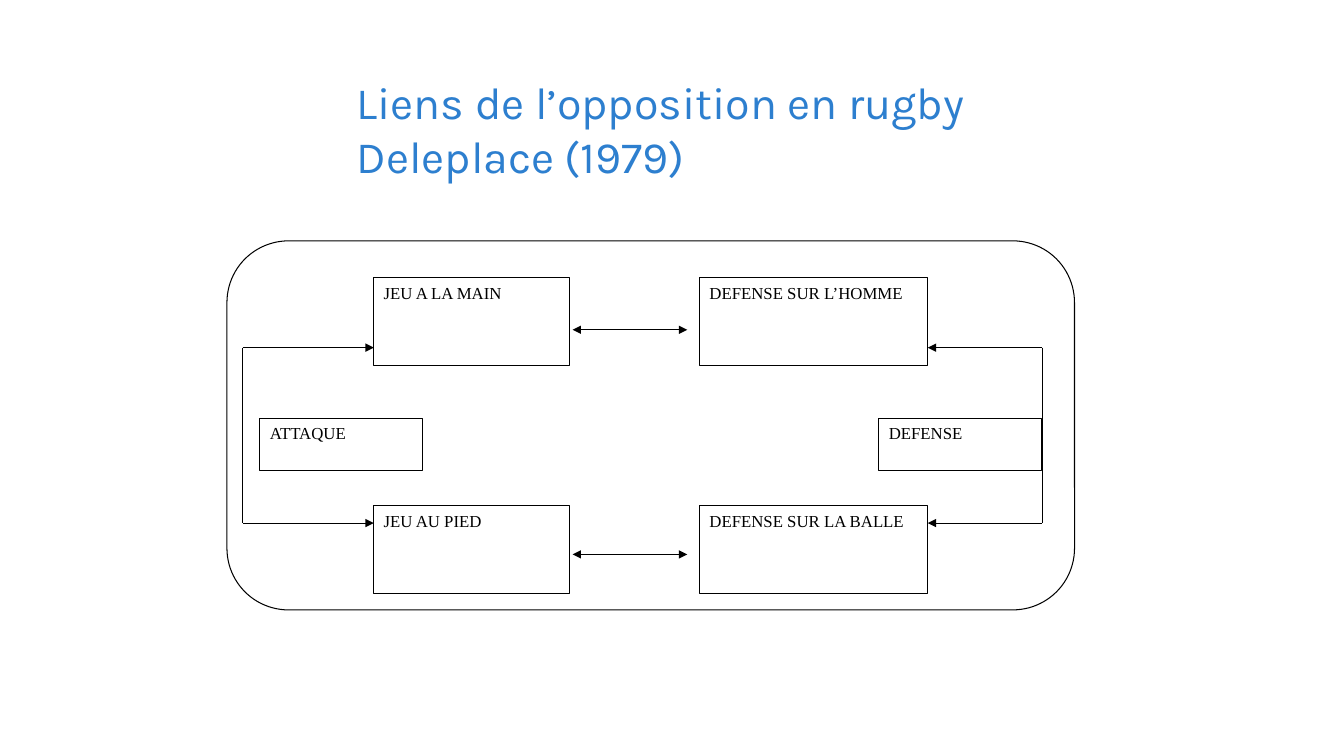
import pptx
import pptx.util
import pptx.dml.color
import pptx.enum.shapes
import pptx.enum.text
import pptx.oxml
import pptx.oxml.ns
from pptx.util import Cm

TITLE = ["Liens de l’opposition en rugby", "Deleplace (1979)"]
ROWS = [
    {"boxes": ["JEU A LA MAIN", "DEFENSE SUR L’HOMME"], "top": 6.99, "link": 8.31, "branch": 8.76},
    {"boxes": ["JEU AU PIED", "DEFENSE SUR LA BALLE"], "top": 12.75, "link": 13.97, "branch": 13.18},
]
SIDES = [
    {"role": "ATTAQUE", "role_left": 6.55, "rail": 6.12, "left": 9.42, "width": 4.93, "entry": 9.42},
    {"role": "DEFENSE", "role_left": 22.15, "rail": 26.26, "left": 17.63, "width": 5.75, "entry": 23.38},
]
BOX_HEIGHT = 2.21
ROLE_TOP, ROLE_WIDTH, ROLE_HEIGHT = 10.54, 4.11, 1.32
LINK_START, LINK_END = 14.43, 17.32
FRAME = (5.72, 6.07, 21.36, 9.3)
COLORS = {"title": "2D7FCF", "ink": "000000"}
SHAPES = pptx.enum.shapes.MSO_SHAPE


def color(name):
    return pptx.dml.color.RGBColor.from_string(COLORS[name])


def set_outline(line):
    line.color.rgb = color("ink")
    line.width = pptx.util.Pt(0.75)


def style_text(paragraph, font, size, color_name):
    paragraph.font.name = font
    paragraph.font.size = pptx.util.Pt(size)
    paragraph.font.color.rgb = color(color_name)


def add_outlined(kind, left, top, width, height):
    outlined = slide.shapes.add_shape(kind, Cm(left), Cm(top), Cm(width), Cm(height))
    outlined.shadow.inherit = False
    outlined.fill.background()
    set_outline(outlined.line)
    return outlined


def add_box(label, left, top, width, height):
    frame = add_outlined(SHAPES.RECTANGLE, left, top, width, height).text_frame
    frame.word_wrap = True
    frame.vertical_anchor = pptx.enum.text.MSO_ANCHOR.TOP
    paragraph = frame.paragraphs[0]
    paragraph.text = label
    paragraph.alignment = pptx.enum.text.PP_ALIGN.LEFT
    style_text(paragraph, "Times New Roman", 12, "ink")


def add_line(x1, y1, x2, y2, arrowheads=()):
    connector = slide.shapes.add_connector(
        pptx.enum.shapes.MSO_CONNECTOR.STRAIGHT, Cm(x1), Cm(y1), Cm(x2), Cm(y2))
    set_outline(connector.line)
    for end in arrowheads:
        arrowhead = pptx.oxml.parse_xml(f'<a:{end} {pptx.oxml.ns.nsdecls("a")} type="triangle"/>')
        connector.line._get_or_add_ln().append(arrowhead)
    no_effects = pptx.oxml.parse_xml(f'<a:effectLst {pptx.oxml.ns.nsdecls("a")}/>')
    connector._element.spPr.append(no_effects)


presentation = pptx.Presentation()
presentation.slide_width, presentation.slide_height = Cm(33.87), Cm(19.05)
slide = presentation.slides.add_slide(presentation.slide_layouts[6])

title = slide.shapes.add_textbox(Cm(8.74), Cm(1.12), Cm(20.45), Cm(3.6)).text_frame
title.word_wrap = True
title.vertical_anchor = pptx.enum.text.MSO_ANCHOR.BOTTOM
heading = title.paragraphs[0]
for number, text in enumerate(TITLE):
    if number:
        heading.add_line_break()
    heading.add_run().text = text
style_text(heading, "Karla", 32, "title")

field = add_outlined(SHAPES.ROUNDED_RECTANGLE, *FRAME)
field.adjustments[0] = 0.167

for row in ROWS:
    for side, label in zip(SIDES, row["boxes"]):
        add_box(label, side["left"], row["top"], side["width"], BOX_HEIGHT)
        add_line(side["rail"], row["branch"], side["entry"], row["branch"], ["tailEnd"])
    add_line(LINK_START, row["link"], LINK_END, row["link"], ["headEnd", "tailEnd"])

for side in SIDES:
    add_box(side["role"], side["role_left"], ROLE_TOP, ROLE_WIDTH, ROLE_HEIGHT)
    add_line(side["rail"], ROWS[0]["branch"], side["rail"], ROWS[1]["branch"])

presentation.save("out.pptx")
